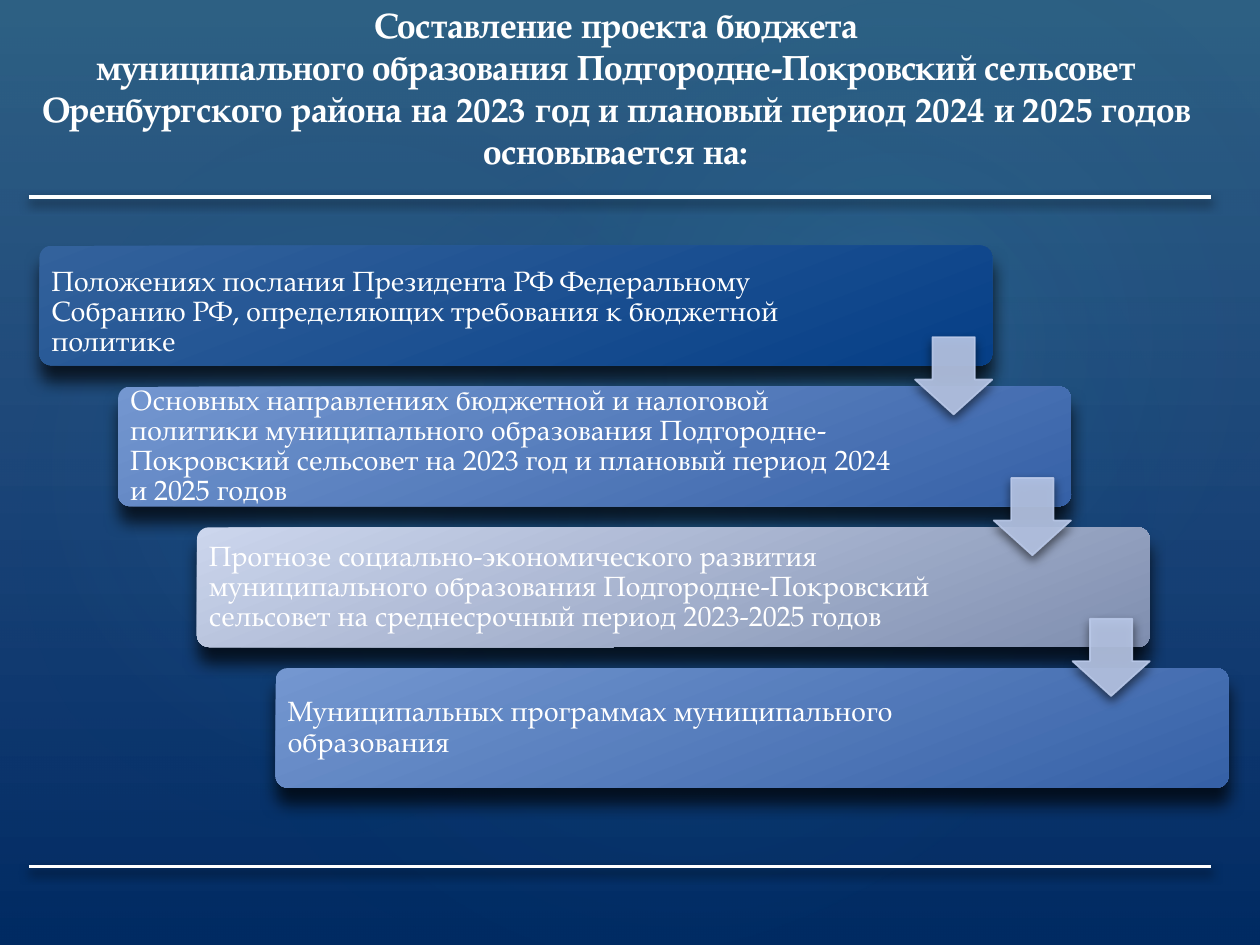
"""Builds the slide on what the municipal draft budget is based on."""
from lxml.etree import SubElement
from pptx import Presentation
from pptx.dml.color import RGBColor as RGB
from pptx.enum.shapes import MSO_CONNECTOR as LINE, MSO_SHAPE as SHAPE
from pptx.enum.text import MSO_ANCHOR as ANCHOR, MSO_AUTO_SIZE as AUTO, PP_ALIGN as ALIGN
from pptx.oxml import parse_xml
from pptx.oxml.ns import nsdecls, qn
from pptx.util import Inches, Pt

FONT = "TeX Gyre Pagella"
COLORS = {
    "white": "FFFFFF", "black": "000000", "arrow": "B9C8E8",
    "sky": "455890", "sea": "00295F", "veil": "03706E", "deep": "073E87", "glow": "5AFBF8",
    "navy_a": "33629C", "navy_b": "063F87", "blue_a": "7497D0", "blue_b": "3661A7",
    "pale_a": "CCD6ED", "pale_b": "7F8EAF",
}
CARDS = [
    ("navy", 10.34, 0.05, "Положениях послания Президента РФ Федеральному Собранию РФ, "
     "определяющих требования к бюджетной политике"),
    ("blue", 10.02, 0, "Основных направлениях бюджетной и налоговой политики муниципального "
     "образования Подгородне-Покровский сельсовет на 2023 год и плановый период 2024 и 2025 годов"),
    ("pale", 10.02, 0, "Прогнозе социально-экономического развития муниципального образования "
     "Подгородне-Покровский сельсовет на среднесрочный период 2023-2025 годов"),
    ("blue", 10.02, 0, "Муниципальных программах муниципального образования"),
]
GLOWS = [
    (0.15, 0.152, 0.792, 0.832, 328.7, 7),
    (-0.03, 0.17, 0.606, 0.653, 294.3, 8),
    (0.358, 0.017, 0.709, 0.693, 328.7, 8),
]
TITLE = ("Составление проекта бюджета\vмуниципального образования Подгородне-Покровский сельсовет "
         "Оренбургского района на 2023 год и плановый период 2024 и 2025 годов основывается на:")


def paint(s, stops, angle=None):
    s.line.fill.background()
    s.fill.background()
    s.shadow.inherit = False
    marks = "".join(
        f'<a:gs pos="{pos * 1000}"><a:srgbClr val="{COLORS[name]}">'
        f'<a:alpha val="{alpha * 1000}"/></a:srgbClr></a:gs>' for pos, name, alpha in stops)
    if angle is None:
        way = '<a:path path="circle"><a:fillToRect l="50000" t="50000" r="50000" b="50000"/></a:path>'
    else:
        way = f'<a:lin ang="{angle * 60000}" scaled="0"/>'
    props = s._element.spPr
    props.replace(props.find(qn("a:noFill")), parse_xml(
        f'<a:gradFill {nsdecls("a")} rotWithShape="1"><a:gsLst>{marks}</a:gsLst>{way}</a:gradFill>'))


def shade(s, alpha, blur, dist):
    props = s._element.spPr
    effects = props.find(qn("a:effectLst"))
    if effects is None:
        effects = SubElement(props, qn("a:effectLst"))
    shadow = SubElement(effects, qn("a:outerShdw"), blurRad=str(Pt(blur)), dist=str(Pt(dist)),
                        dir="5400000", rotWithShape="0")
    color = SubElement(shadow, qn("a:srgbClr"), val=COLORS["black"])
    SubElement(color, qn("a:alpha"), val=str(alpha * 1000))


prs = Presentation()
prs.slide_width, prs.slide_height = Inches(10), Inches(7.5)
W, H = prs.slide_width, prs.slide_height
col, row = W / 16, H * 0.149
slide = prs.slides.add_slide(prs.slide_layouts[5])
shapes = slide.shapes

back = slide.background.fill
back.gradient()
back.gradient_angle = 270
for stop, name, pos in zip(back.gradient_stops, ("sky", "sea"), (0, 1)):
    stop.color.rgb = RGB.from_string(COLORS[name])
    stop.position = pos

veil = shapes.add_shape(SHAPE.RECTANGLE, 0, 0, W, H)
paint(veil, [(0, "veil", 36), (100, "deep", 10)], 90)
for x, y, w, h, turn, alpha in GLOWS:
    s = shapes.add_shape(SHAPE.OVAL, *map(int, (x * W, y * H, w * W, h * H)))
    s.rotation = turn
    paint(s, [(0, "glow", alpha), (58, "deep", 0)])

title = shapes.title
shapes._spTree.append(title._element)
box = dict(left=0.014 * W, top=0.017 * H, width=0.95 * W, height=0.171 * H)
for key, value in box.items():
    setattr(title, key, int(value))
tf = title.text_frame
for key, value in dict(text=TITLE, word_wrap=True, auto_size=AUTO.NONE,
                       vertical_anchor=ANCHOR.BOTTOM).items():
    setattr(tf, key, value)
p = tf.paragraphs[0]
p.alignment = ALIGN.CENTER
for r in p.runs:
    for key, value in dict(name=FONT, size=Pt(20), bold=True).items():
        setattr(r.font, key, value)
    r.font.color.rgb = RGB.from_string(COLORS["white"])

for y in (0.208, 0.917):
    s = shapes.add_connector(LINE.STRAIGHT, *map(int, (0.023 * W, y * H, 0.961 * W, y * H)))
    s.line.color.rgb = RGB.from_string(COLORS["white"])
    s.line.width = Pt(2.25)
    shade(s, 60, 6, 3)

for i, (tone, wide, drop, text) in enumerate(CARDS):
    x, y = (i + 0.5) * col, (i + 1.745) * row
    s = shapes.add_shape(SHAPE.ROUNDED_RECTANGLE, *map(int, (x, y, 12.1 * col, 0.85 * row)))
    s.adjustments[0] = 0.1
    paint(s, [(0, f"{tone}_a", 100), (100, f"{tone}_b", 100)], 69)
    shade(s, 70, 9, 9)
    label = shapes.add_textbox(*map(int, (
        x + 0.04 * col, y + (0.025 + drop) * row, wide * col, 0.8 * row)))
    tf = label.text_frame
    margins = dict.fromkeys(
        ("margin_left", "margin_top", "margin_right", "margin_bottom"), Inches(0.07))
    for key, value in dict(margins, word_wrap=True, vertical_anchor=ANCHOR.MIDDLE).items():
        setattr(tf, key, value)
    p = tf.paragraphs[0]
    p.line_spacing = 0.9
    r = p.add_run()
    r.text = text
    r.font.name, r.font.size = FONT, Pt(16)
    r.font.color.rgb = RGB.from_string(COLORS["white"])

side = 0.98 * col
for i in range(len(CARDS) - 1):
    s = shapes.add_shape(SHAPE.DOWN_ARROW, *map(int, (
        (i + 12.6) * col - side, (i + 2.395) * row, side, side)))
    s.adjustments[0], s.adjustments[1] = 0.55, 0.45
    s.shadow.inherit = False
    s.fill.solid()
    s.line.width = Pt(1)
    for color in (s.fill.fore_color, s.line.color):
        color.rgb = RGB.from_string(COLORS["arrow"])
    for tint in list(s._element.spPr.iter(qn("a:srgbClr"))):
        SubElement(tint, qn("a:alpha"), val="90000")
    shade(s, 60, 6, 3)

prs.save("out.pptx")
